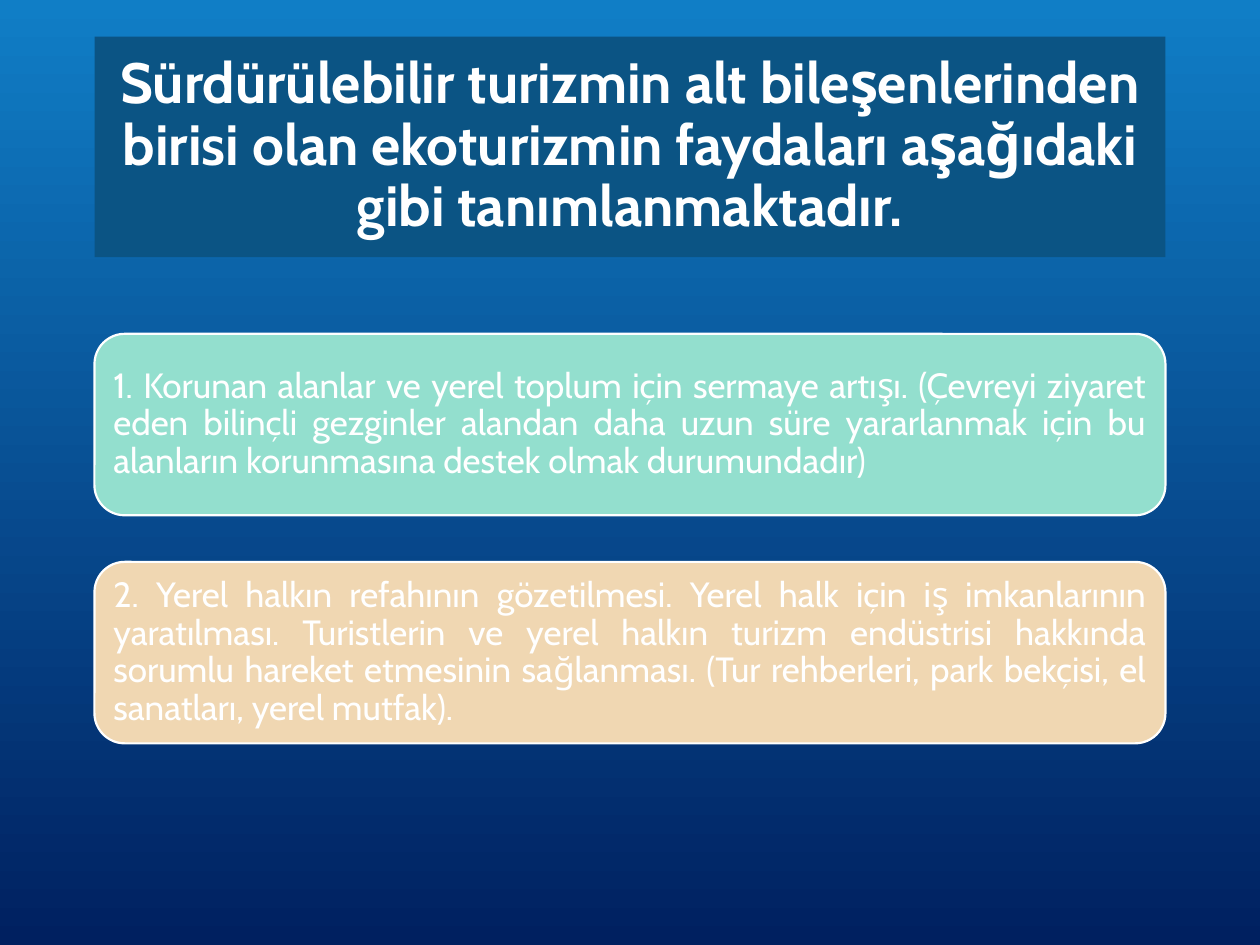
from pptx import Presentation
from pptx.dml.color import RGBColor
from pptx.enum.shapes import MSO_SHAPE
from pptx.enum.text import MSO_ANCHOR, MSO_AUTO_SIZE, PP_ALIGN
from pptx.util import Inches, Pt

COLORS = {
    "sky": "107EC6",
    "navy": "002060",
    "title": "0B5484",
    "mint": "93DFCE",
    "sand": "F0D7B2",
    "white": "FFFFFF",
}
FONT = "Cabin"
LEFT, WIDTH = Inches(0.75), Inches(8.5)
CARD_TOP, CARD_HEIGHT, CARD_STEP = 2.65, 1.44, 1.81

TITLE = (
    "Sürdürülebilir turizmin alt bileşenlerinden birisi olan "
    "ekoturizmin faydaları aşağıdaki gibi tanımlanmaktadır."
)
BENEFITS = [
    ("mint", "1. Korunan alanlar ve yerel toplum için sermaye artışı. "
             "(Çevreyi ziyaret eden bilinçli gezginler alandan daha uzun süre "
             "yararlanmak için bu alanların korunmasına destek olmak durumundadır)"),
    ("sand", "2. Yerel halkın refahının gözetilmesi. Yerel halk için iş "
             "imkanlarının yaratılması. Turistlerin ve yerel halkın turizm "
             "endüstrisi hakkında sorumlu hareket etmesinin sağlanması. "
             "(Tur rehberleri, park bekçisi, el sanatları, yerel mutfak)."),
]


def color(name):
    return RGBColor.from_string(COLORS[name])


def write_text(shape, text, size, alignment, bold=False):
    """Fill the shape with one vertically centred white paragraph."""
    frame = shape.text_frame
    frame.word_wrap = True
    frame.auto_size = MSO_AUTO_SIZE.NONE
    frame.vertical_anchor = MSO_ANCHOR.MIDDLE
    paragraph = frame.paragraphs[0]
    paragraph.alignment = alignment
    paragraph.line_spacing = 0.9
    run = paragraph.add_run()
    run.text = text
    run.font.name = FONT
    run.font.size = Pt(size)
    run.font.bold = bold
    run.font.color.rgb = color("white")
    return frame


presentation = Presentation()
presentation.slide_width = Inches(10)
presentation.slide_height = Inches(7.5)
slide = presentation.slides.add_slide(presentation.slide_layouts[5])

# Background runs from sky blue at the top to navy at the bottom
background = slide.background.fill
background.gradient()
background.gradient_angle = 270
for stop, name, position in zip(background.gradient_stops, ("sky", "navy"), (0, 1)):
    stop.color.rgb = color(name)
    stop.position = position

# Title
title = slide.shapes.title
title.left, title.top = LEFT, Inches(0.29)
title.width, title.height = WIDTH, Inches(1.75)
title.fill.solid()
title.fill.fore_color.rgb = color("title")
write_text(title, TITLE, 32.4, PP_ALIGN.CENTER, bold=True)

# Benefit cards
for index, (fill_name, text) in enumerate(BENEFITS):
    card = slide.shapes.add_shape(
        MSO_SHAPE.ROUNDED_RECTANGLE,
        LEFT, Inches(CARD_TOP + index * CARD_STEP), WIDTH, Inches(CARD_HEIGHT),
    )
    card.shadow.inherit = False
    card.fill.solid()
    card.fill.fore_color.rgb = color(fill_name)
    card.line.color.rgb = color("white")
    card.line.width = Pt(1.25)
    frame = write_text(card, text, 20, PP_ALIGN.JUSTIFY)
    frame.margin_left = frame.margin_right = Inches(0.08)
    frame.margin_top = frame.margin_bottom = Inches(0.08)

presentation.save("out.pptx")
